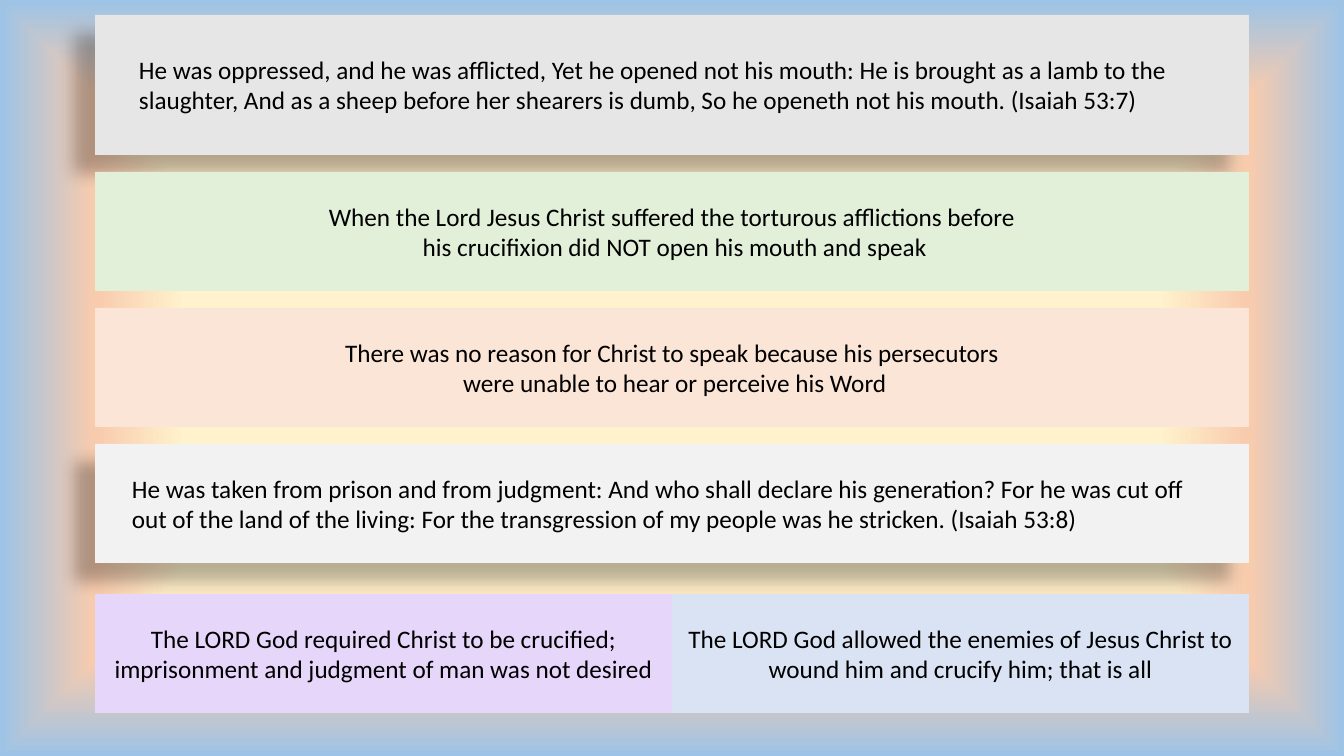
from lxml import etree
from pptx import Presentation
from pptx.dml.color import RGBColor
from pptx.enum.shapes import MSO_SHAPE
from pptx.enum.text import MSO_ANCHOR, MSO_AUTO_SIZE, PP_ALIGN
from pptx.oxml import parse_xml
from pptx.oxml.ns import nsdecls, qn
from pptx.util import Emu, Pt

PX = 914400 / 100.8  # EMU in one px

BLACK = RGBColor(0x00, 0x00, 0x00)
GREY = RGBColor(0xE7, 0xE6, 0xE6)
LIGHT_GREY = RGBColor(0xF2, 0xF2, 0xF2)
GREEN = RGBColor(0xE2, 0xF0, 0xD9)
PEACH = RGBColor(0xFB, 0xE5, 0xD6)
LILAC = RGBColor(0xE5, 0xD6, 0xFA)
BLUE = RGBColor(0xDA, 0xE3, 0xF3)
CREAM = RGBColor(0xFF, 0xF2, 0xCC)
APRICOT = RGBColor(0xF8, 0xCB, 0xAD)
SKY = RGBColor(0x9D, 0xC3, 0xE6)


class Slide:
    font, size, color = "Calibri", Pt(18), BLACK

    def __init__(self, prs):
        self.s = prs.slides.add_slide(prs.slide_layouts[6])

    def box(self, *px):
        return [Emu(round(v * PX)) for v in px]

    def background(self, stops):
        fill = self.s.background.fill
        fill.gradient()
        grad = self.s.element.find(".//" + qn("a:gradFill"))
        gs = "".join(f'<a:gs pos="{pos * 1000}"><a:srgbClr val="{color}"/></a:gs>'
                     for pos, color in stops)
        grad.getparent().replace(grad, parse_xml(
            f'<a:gradFill {nsdecls("a")} rotWithShape="1"><a:gsLst>{gs}</a:gsLst>'
            '<a:path path="rect"><a:fillToRect l="50000" t="50000" r="50000" b="50000"/>'
            '</a:path></a:gradFill>'))

    def set_text(self, tf, text, align):
        tf.word_wrap = True
        tf.text = text
        for p in tf.paragraphs:
            p.alignment = align
            for r in p.runs:
                r.font.name, r.font.size = self.font, self.size
                r.font.color.rgb = self.color

    def panel(self, x, y, w, h, fill, text=None):
        sp = self.s.shapes.add_shape(MSO_SHAPE.RECTANGLE, *self.box(x, y, w, h))
        sp.shadow.inherit = False
        sp.fill.solid()
        sp.fill.fore_color.rgb = fill
        sp.line.fill.background()
        if text:
            sp.text_frame.vertical_anchor = MSO_ANCHOR.MIDDLE
            self.set_text(sp.text_frame, text, PP_ALIGN.CENTER)
        return sp

    def shadowed_panel(self, *args):
        sp = self.panel(*args)
        effects = sp.element.spPr.find(qn("a:effectLst"))
        shadow = etree.SubElement(effects, qn("a:outerShdw"), blurRad=str(Pt(11.8)),
                                  dist=str(Pt(19.7)), dir=str(141 * 60000),
                                  algn="ctr", rotWithShape="0")
        color = etree.SubElement(shadow, qn("a:srgbClr"), val=str(BLACK))
        etree.SubElement(color, qn("a:alpha"), val="28000")

    def verse(self, x, y, w, h, text):
        tf = self.s.shapes.add_textbox(*self.box(x, y, w, h)).text_frame
        self.set_text(tf, text, PP_ALIGN.LEFT)
        tf.auto_size = MSO_AUTO_SIZE.SHAPE_TO_FIT_TEXT


def main():
    prs = Presentation()
    prs.slide_width, prs.slide_height = Emu(round(1344 * PX)), Emu(round(756 * PX))
    slide = Slide(prs)
    slide.background([(51, CREAM), (75, APRICOT), (100, SKY)])

    left, width, height = 95, 1154, 119
    row_top, pitch = 172, 136

    # First verse
    slide.shadowed_panel(left, 15, width, 140, GREY)
    slide.verse(129, 49, 1087, 72,
                "He was oppressed, and he was afflicted, Yet he opened not his mouth: "
                "He is brought as a lamb to the slaughter, And as a sheep before her "
                "shearers is dumb, So he openeth not his mouth. (Isaiah 53:7)")

    # Comments on the first verse
    comments = [
        (GREEN, "When the Lord Jesus Christ suffered the torturous afflictions before\n"
                " his crucifixion did NOT open his mouth and speak"),
        (PEACH, "There was no reason for Christ to speak because his persecutors\n"
                " were unable to hear or perceive his Word"),
    ]
    for i, (fill, text) in enumerate(comments):
        slide.panel(left, row_top + i * pitch, width, height, fill, text)

    # Second verse
    slide.shadowed_panel(left, row_top + 2 * pitch, width, height, LIGHT_GREY)
    slide.verse(122, 468, 1101, 72,
                "He was taken from prison and from judgment: And who shall declare his "
                "generation? For he was cut off out of the land of the living: For the "
                "transgression of my people was he stricken. (Isaiah 53:8)")

    # Comments on the second verse, side by side
    half = width // 2
    conclusions = [
        (LILAC, "The LORD God required Christ to be crucified; "
                "imprisonment and judgment of man was not desired"),
        (BLUE, "The LORD God allowed the enemies of Jesus Christ to "
               "wound him and crucify him; that is all"),
    ]
    for i, (fill, text) in enumerate(conclusions):
        slide.panel(left + i * half, 594, half, height, fill, text)

    prs.save("out.pptx")


if __name__ == "__main__":
    main()
